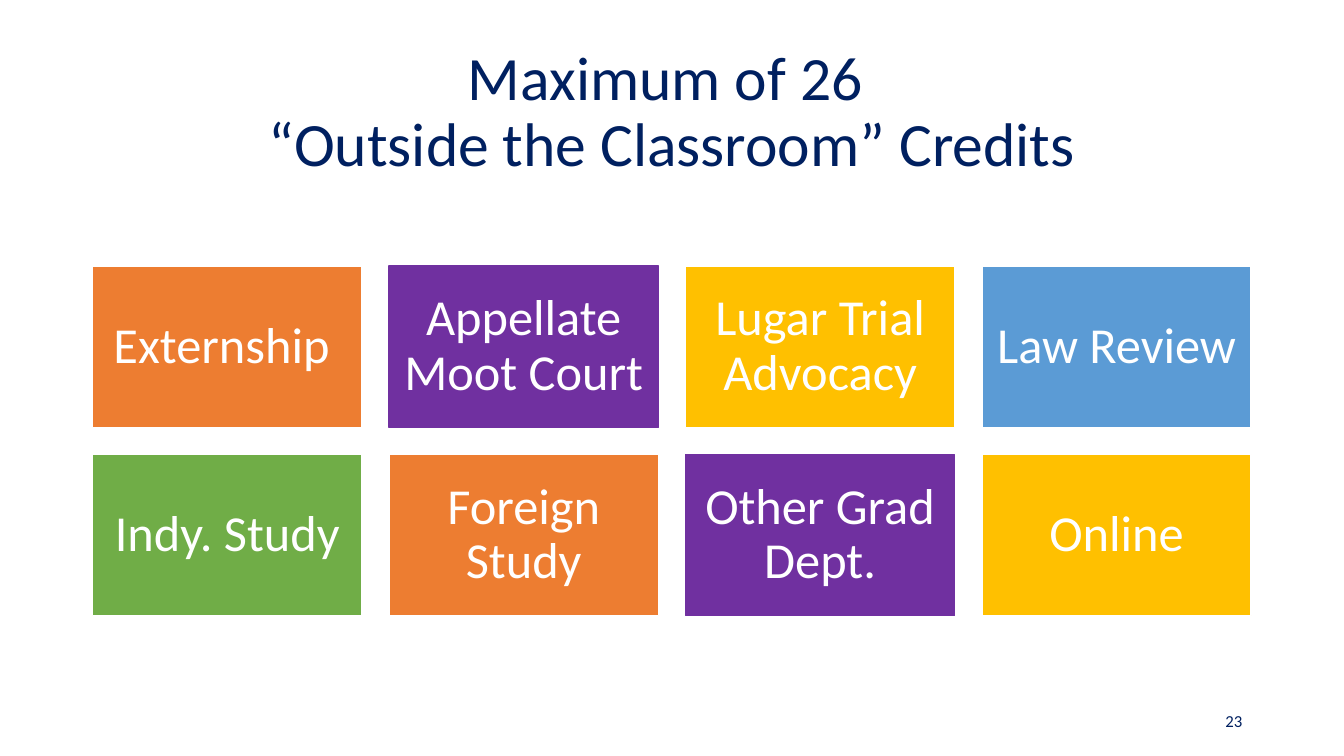
from pptx import Presentation
from pptx.dml.color import RGBColor
from pptx.enum.shapes import MSO_SHAPE
from pptx.enum.text import MSO_ANCHOR, PP_ALIGN
from pptx.util import Inches, Pt

NAVY = RGBColor(0x00, 0x20, 0x60)
WHITE = RGBColor(0xFF, 0xFF, 0xFF)
ORANGE = RGBColor(0xED, 0x7D, 0x31)
PURPLE = RGBColor(0x70, 0x30, 0xA0)
GOLD = RGBColor(0xFF, 0xC0, 0x00)
BLUE = RGBColor(0x5B, 0x9B, 0xD5)
GREEN = RGBColor(0x70, 0xAD, 0x47)

CREDITS = [
    ("Externship ", ORANGE),
    ("Appellate Moot Court ", PURPLE),
    ("Lugar Trial Advocacy", GOLD),
    ("Law Review ", BLUE),
    ("Indy. Study", GREEN),
    ("Foreign Study", ORANGE),
    ("Other Grad Dept.", PURPLE),
    ("Online", GOLD),
]
COLUMNS = 4
TILE_W, TILE_H, GAP = 2.67, 1.6, 0.27


def write(sp, text, size, color, align, spacing=1.0):
    """Fill a shape with one vertically centred paragraph."""
    tf = sp.text_frame
    tf.word_wrap = True
    tf.vertical_anchor = MSO_ANCHOR.MIDDLE
    tf.text = text
    p = tf.paragraphs[0]
    p.alignment = align
    p.line_spacing = spacing
    for r in p.runs:
        r.font.name = "Calibri"
        r.font.size = Pt(size)
        r.font.color.rgb = color


def add_label(slide, box, text, size, align, spacing=1.0):
    """Add a navy text box at the given left, top, width and height."""
    sp = slide.shapes.add_textbox(*map(Inches, box))
    write(sp, text, size, NAVY, align, spacing)


def add_tile(slide, box, text, fill):
    """Add one coloured credit tile in the given box."""
    sp = slide.shapes.add_shape(MSO_SHAPE.RECTANGLE, *map(Inches, box))
    sp.shadow.inherit = False
    sp.fill.solid()
    sp.fill.fore_color.rgb = fill
    sp.line.color.rgb = PURPLE if fill == PURPLE else WHITE
    sp.line.width = Pt(1)
    tf = sp.text_frame
    tf.margin_left = tf.margin_right = Inches(0.15)
    tf.margin_top = tf.margin_bottom = Inches(0.15)
    write(sp, text, 36, WHITE, PP_ALIGN.CENTER, 0.9)


def add_credit_grid(slide, left, top):
    """Lay the credit tiles out in rows from the given corner."""
    for i, (text, fill) in enumerate(CREDITS):
        row, col = divmod(i, COLUMNS)
        x = left + col * (TILE_W + GAP)
        y = top + row * (TILE_H + GAP)
        add_tile(slide, (x, y, TILE_W, TILE_H), text, fill)


def main():
    """Build the slide and save it."""
    prs = Presentation()
    prs.slide_width, prs.slide_height = Inches(13.33), Inches(7.5)
    slide = prs.slides.add_slide(prs.slide_layouts[6])
    add_label(slide, (0.92, 0.4, 11.5, 1.45),
              "Maximum of 26 \v“Outside the Classroom” Credits",
              44, PP_ALIGN.CENTER, 0.9)
    add_credit_grid(slide, 0.92, 2.64)
    add_label(slide, (9.42, 6.95, 3, 0.4), "23", 12, PP_ALIGN.RIGHT)
    prs.save("out.pptx")


if __name__ == "__main__":
    main()
